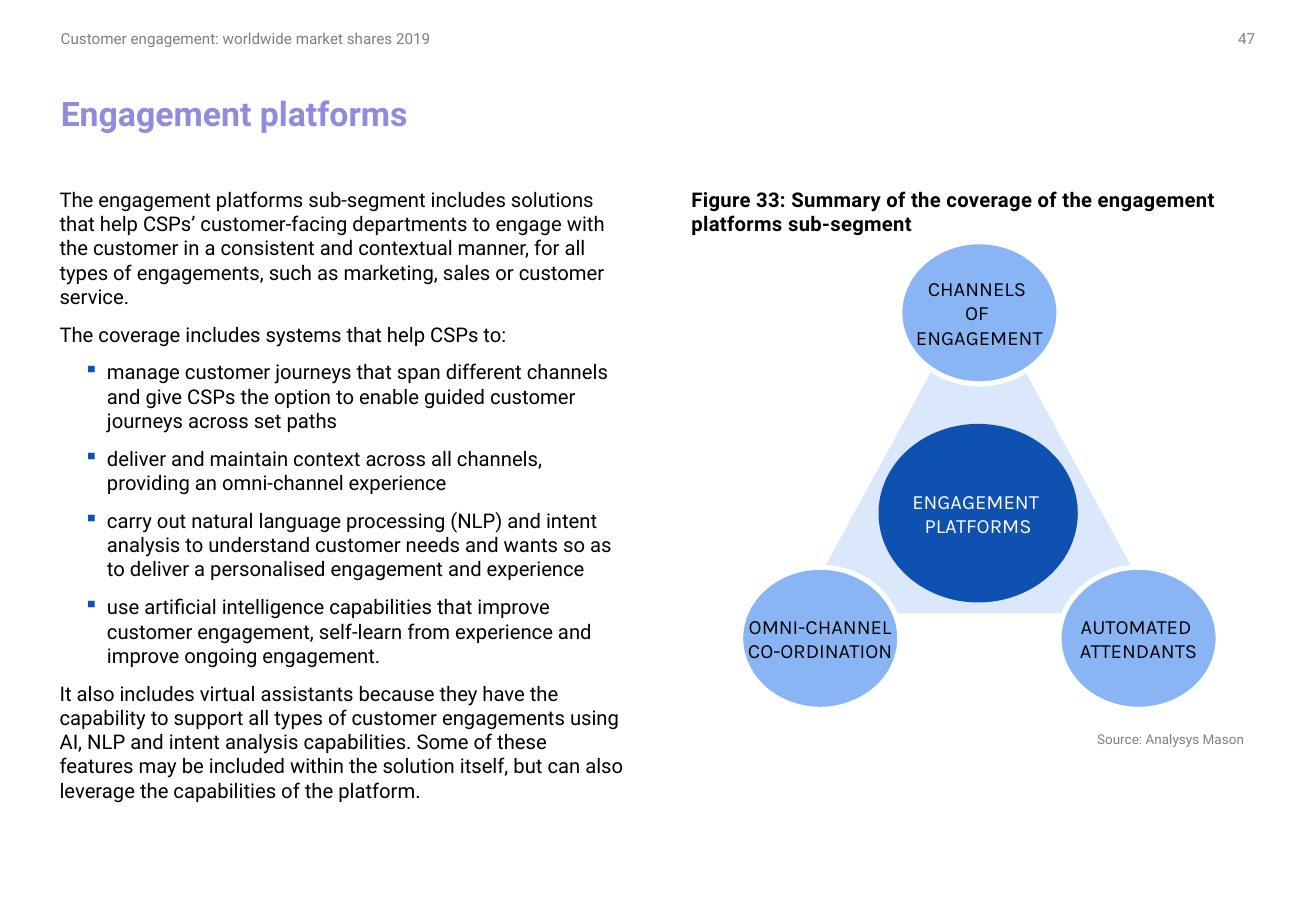
"""Build the engagement platforms slide with its coverage diagram."""
from dataclasses import dataclass

from pptx import Presentation
from pptx.dml.color import RGBColor
from pptx.enum.shapes import MSO_SHAPE
from pptx.enum.text import MSO_ANCHOR, MSO_AUTO_SIZE, PP_ALIGN
from pptx.oxml.ns import qn
from pptx.util import Inches, Pt
from lxml import etree

ELLIPSE, TRIANGLE = MSO_SHAPE.OVAL, MSO_SHAPE.ISOSCELES_TRIANGLE
TOP, MIDDLE = MSO_ANCHOR.TOP, MSO_ANCHOR.MIDDLE
LEFT, CENTER, RIGHT = PP_ALIGN.LEFT, PP_ALIGN.CENTER, PP_ALIGN.RIGHT
NO_AUTOFIT = MSO_AUTO_SIZE.NONE

TITLE = "Engagement platforms"
HEADER = "Customer engagement: worldwide market shares 2019"
PAGE_NUMBER = "47"
CAPTION = "Figure 33: Summary of the coverage of the engagement platforms sub-segment"
SOURCE = "Source: Analysys Mason"
BODY = [
    ("text", "The engagement platforms sub-segment includes solutions that help CSPs’ customer-facing "
             "departments to engage with the customer in a consistent and contextual manner, for all "
             "types of engagements, such as marketing, sales or customer service."),
    ("text", "The coverage includes systems that help CSPs to:"),
    ("bullet", "manage customer journeys that span different channels and give CSPs the option to "
               "enable guided customer journeys across set paths"),
    ("bullet", "deliver and maintain context across all channels, providing an omni-channel experience"),
    ("bullet", "carry out natural language processing (NLP) and intent analysis to understand customer "
               "needs and wants so as to deliver a personalised engagement and experience"),
    ("bullet", "use artificial intelligence capabilities that improve customer engagement, self-learn "
               "from experience and improve ongoing engagement."),
    ("text", "It also includes virtual assistants because they have the capability to support all types "
             "of customer engagements using AI, NLP and intent analysis capabilities. Some of these "
             "features may be included within the solution itself, but can also leverage the "
             "capabilities of the platform."),
]
HUB = ["ENGAGEMENT ", "PLATFORMS"]
SATELLITES = [
    (0, 0, ["CHANNELS ", "OF ", "ENGAGEMENT"]),
    (1, 1, ["AUTOMATED ", "ATTENDANTS"]),
    (-1, 1, ["OMNI-CHANNEL", "CO-ORDINATION"]),
]


@dataclass(frozen=True)
class Theme:
    """Colours, fonts and type sizes of the slide."""
    text_font: str = "Roboto"
    diagram_font: str = "Karla"
    black: str = "000000"
    white: str = "FFFFFF"
    header: str = "7F7F7F"
    muted: str = "808080"
    title: str = "8F8CE0"
    hub: str = "0F51B1"
    satellite: str = "8AB5F5"
    triangle: str = "C4DAFA"
    title_size: int = 20
    body_size: int = 12
    header_size: int = 9
    source_size: int = 8


THEME = Theme()
TEXT_MARGINS = (0, 0.05)
SHAPE_MARGINS = (0.1, 0.05)
COLUMN_LEFT, COLUMN_RIGHT, COLUMN_TOP, COLUMN_WIDTH = 0.49, 5.69, 1.49, 4.65
SATELLITE_SIZE, SATELLITE_TOP, SATELLITE_DROP = (1.31, 1.17), 1.99, 2.68
HUB_SIZE, HUB_TOP = (1.64, 1.47), 3.49
TRIANGLE_SIZE, TRIANGLE_TOP = (2.94, 2.7), 2.35
DIAGRAM_AXIS, SATELLITE_AXIS = 8.05, 8.06


def font_format(size, color, name=THEME.text_font, bold=False):
    """Return the font values of a text style."""
    return {"size": Pt(size), "name": name, "bold": bold}, color


def format_font(font, style):
    """Apply a text style to a font."""
    values, color = style
    for attribute, value in values.items():
        setattr(font, attribute, value)
    font.color.rgb = RGBColor.from_string(color)


def format_frame(frame, margins, anchor, wrap):
    """Set the margins, anchor and wrapping of a text frame."""
    horizontal, vertical = map(Inches, margins)
    values = {"margin_left": horizontal, "margin_right": horizontal, "margin_top": vertical,
              "margin_bottom": vertical, "vertical_anchor": anchor,
              "auto_size": NO_AUTOFIT, "word_wrap": wrap}
    for attribute, value in values.items():
        setattr(frame, attribute, value)


def write_paragraphs(frame, lines, style, alignment=LEFT, space_after=0):
    """Write one paragraph per line and return the paragraphs."""
    paragraphs = []
    for index, line in enumerate(lines):
        paragraph = frame.add_paragraph() if index else frame.paragraphs[0]
        paragraph.alignment = alignment
        paragraph.space_after = Pt(space_after)
        run = paragraph.add_run()
        run.text = line
        format_font(run.font, style)
        paragraphs.append(paragraph)
    return paragraphs


def add_text(slide, box, lines, style, alignment=LEFT, anchor=TOP, wrap=True,
             space_after=0, margins=TEXT_MARGINS):
    """Add a text box and return its paragraphs."""
    frame = slide.shapes.add_textbox(*map(Inches, box)).text_frame
    format_frame(frame, margins, anchor, wrap)
    return write_paragraphs(frame, lines, style, alignment, space_after)


def add_bullet(paragraph):
    """Give a paragraph a hanging square bullet."""
    paragraph.level = 1
    properties = paragraph._p.get_or_add_pPr()
    properties.set("marL", str(Inches(0.39)))
    properties.set("indent", str(Inches(-0.19)))
    color = etree.SubElement(properties, qn("a:buClr"))
    etree.SubElement(color, qn("a:srgbClr"), val=THEME.hub)
    etree.SubElement(properties, qn("a:buChar"), char="▪")


def add_figure(slide, kind, axis, top, size, fill, outline=None):
    """Add a filled preset shape centred on a vertical axis."""
    width, height = size
    shape = slide.shapes.add_shape(kind, *map(Inches, (axis - width / 2, top, width, height)))
    shape.shadow.inherit = False
    shape.fill.solid()
    shape.fill.fore_color.rgb = RGBColor.from_string(fill)
    if outline:
        shape.line.color.rgb = RGBColor.from_string(outline)
        shape.line.width = Pt(3)
    else:
        shape.line.fill.background()
    return shape


def add_bubble(slide, axis, top, size, fill, lines, color, outline=None):
    """Add a labelled ellipse."""
    frame = add_figure(slide, ELLIPSE, axis, top, size, fill, outline).text_frame
    format_frame(frame, SHAPE_MARGINS, MIDDLE, False)
    write_paragraphs(frame, lines, font_format(THEME.body_size, color, THEME.diagram_font), CENTER)


def add_diagram(slide):
    """Add the triangle, its three satellites and the hub."""
    triangle = add_figure(slide, TRIANGLE, DIAGRAM_AXIS, TRIANGLE_TOP, TRIANGLE_SIZE, THEME.triangle)
    color = triangle.fill._xPr.find(".//" + qn("a:srgbClr"))
    etree.SubElement(color, qn("a:alpha"), val="60000")
    for column, row, lines in SATELLITES:
        add_bubble(slide, SATELLITE_AXIS + column * SATELLITE_SIZE[0],
                   SATELLITE_TOP + row * SATELLITE_DROP, SATELLITE_SIZE,
                   THEME.satellite, lines, THEME.black, THEME.white)
    add_bubble(slide, DIAGRAM_AXIS, HUB_TOP, HUB_SIZE, THEME.hub, HUB, THEME.white)


def add_title(slide):
    """Place and format the title placeholder."""
    title = slide.shapes.title
    title.left, title.top, title.width, title.height = map(Inches, (0.5, 0.51, 9.84, 0.83))
    format_frame(title.text_frame, TEXT_MARGINS, MIDDLE, True)
    style = font_format(THEME.title_size, THEME.title, bold=True)
    write_paragraphs(title.text_frame, [TITLE], style)[0].line_spacing = Pt(25)


def main():
    """Build and save the slide."""
    presentation = Presentation()
    presentation.slide_width, presentation.slide_height = Inches(10.83), Inches(7.5)
    slide = presentation.slides.add_slide(presentation.slide_layouts[5])
    add_title(slide)
    add_text(slide, (0.5, 0.16, 3.23, 0.31), [HEADER],
             font_format(THEME.header_size, THEME.header), anchor=MIDDLE, wrap=False)
    add_text(slide, (9.58, 0.16, 0.75, 0.31), [PAGE_NUMBER],
             font_format(THEME.header_size, THEME.muted), RIGHT, MIDDLE, wrap=False)
    paragraphs = add_text(slide, (COLUMN_LEFT, COLUMN_TOP, COLUMN_WIDTH, 5.29),
                          [line for _, line in BODY],
                          font_format(THEME.body_size, THEME.black), space_after=8)
    for (kind, _), paragraph in zip(BODY, paragraphs):
        if kind == "bullet":
            add_bullet(paragraph)
    caption = add_text(slide, (COLUMN_RIGHT, COLUMN_TOP, COLUMN_WIDTH, 0.28), [CAPTION],
                       font_format(THEME.body_size, THEME.black, bold=True))[0]
    caption.runs[0].font._element.set("spc", "20")
    add_diagram(slide)
    add_text(slide, (8.78, 5.97, 1.56, 0.24), [SOURCE],
             font_format(THEME.source_size, THEME.muted), RIGHT, margins=SHAPE_MARGINS)
    presentation.save("out.pptx")


if __name__ == "__main__":
    main()
